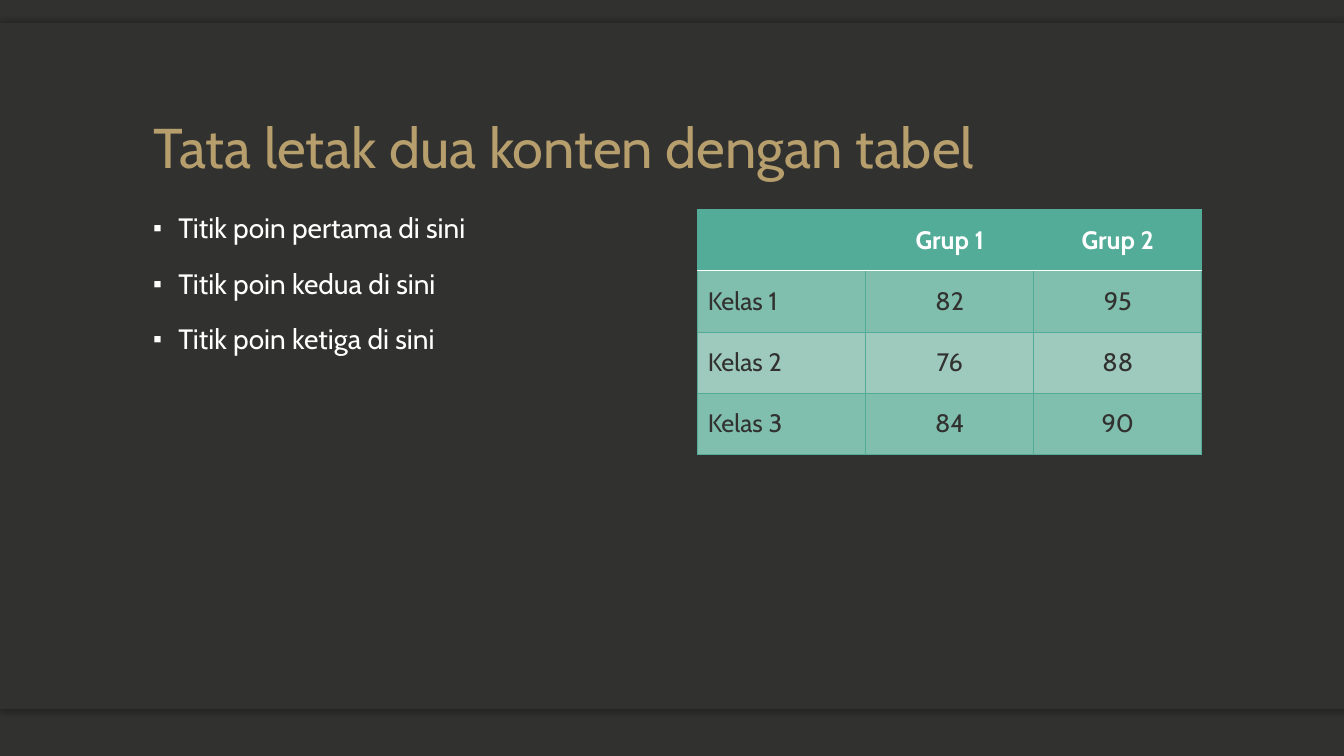
from pptx import Presentation
from pptx import util as u
from pptx.dml.color import RGBColor
from pptx.enum import shapes, text
from pptx.oxml import parse_xml
from pptx.oxml.ns import nsdecls, qn

COLOURS = {"dark": "31312F", "gold": "B79E6D", "white": "FFFFFF", "teal": "52AC97",
           "odd_row": "80BEAE", "even_row": "9ECABD", "shadow": "000000"}
FONT = "Cabin"
WIDTH, HEIGHT = 13.33, 7.5
MARGIN = 1.42
CONTENT_TOP = 2.08
COLUMN_WIDTH = 5
GAP = 0.5
POINTS = ["Titik poin pertama di sini", "Titik poin kedua di sini", "Titik poin ketiga di sini"]
SCORES = [["", "Grup 1", "Grup 2"],
          ["Kelas 1", "82", "95"],
          ["Kelas 2", "76", "88"],
          ["Kelas 3", "84", "90"]]


def colour(name):
    return RGBColor.from_string(COLOURS[name])


def style(paragraph, size, name, bold=False):
    font = paragraph.font
    font.size, font.name, font.bold = u.Pt(size), FONT, bold
    font.color.rgb = colour(name)


def inches(box):
    return [u.Inches(length) for length in box]


def add_panel(slide, box, shadow_angle=None):
    """Add a dark rectangle; an angle in degrees gives it a soft shadow."""
    panel = slide.shapes.add_shape(shapes.MSO_SHAPE.RECTANGLE, *inches(box))
    panel.fill.solid()
    panel.fill.fore_color.rgb = colour("dark")
    panel.line.fill.background()
    panel.shadow.inherit = False
    if shadow_angle is not None:
        effects = panel._element.spPr.find(qn("a:effectLst"))
        effects.append(parse_xml(
            f'<a:outerShdw {nsdecls("a")} blurRad="{u.Pt(4)}" dist="{u.Pt(2)}" '
            f'dir="{shadow_angle * 60000}" rotWithShape="0"><a:srgbClr val="{COLOURS["shadow"]}">'
            '<a:alpha val="25000"/></a:srgbClr></a:outerShdw>'))


def add_backdrop(slide, box):
    """Shade the upper and lower edges of a full-width panel."""
    left, top, width, height = box
    strip = 0.49
    add_panel(slide, (left, top + height - strip, width, strip), 90)
    add_panel(slide, (left, top, width, strip), 270)
    add_panel(slide, box)


def place_title(slide, box, wording):
    title = slide.shapes.title
    slide.shapes._spTree.append(title._element)  # in front of the backdrop
    title.left, title.top, title.width, title.height = inches(box)
    frame = title.text_frame
    frame.text = wording
    frame.word_wrap = True
    frame.auto_size = text.MSO_AUTO_SIZE.NONE
    frame.vertical_anchor = text.MSO_ANCHOR.BOTTOM
    paragraph = frame.paragraphs[0]
    paragraph.alignment = text.PP_ALIGN.LEFT
    paragraph.line_spacing = 0.9
    style(paragraph, 40, "gold")


def add_bullets(slide, box, points):
    frame = slide.shapes.add_textbox(*inches(box)).text_frame
    frame.word_wrap = True
    for index, point in enumerate(points):
        paragraph = frame.add_paragraph() if index else frame.paragraphs[0]
        paragraph.text = point
        paragraph.line_spacing = 0.9
        paragraph.space_before = u.Pt(18 if index else 0)
        properties = paragraph._p.get_or_add_pPr()
        properties.set("marL", str(u.Inches(0.25)))
        properties.set("indent", str(-u.Inches(0.25)))
        for bullet in ('buSzPct {} val="90000"', 'buFont {} typeface="Arial"', 'buChar {} char="▪"'):
            properties.append(parse_xml(f'<a:{bullet.format(nsdecls("a"))}/>'))
        style(paragraph, 20, "white")


def set_border(cell, side, name, width):
    cell._tc.get_or_add_tcPr().append(parse_xml(
        f'<a:ln{side} {nsdecls("a")} w="{u.Pt(width)}"><a:solidFill>'
        f'<a:srgbClr val="{COLOURS[name]}"/></a:solidFill></a:ln{side}>'))


def fill_cell(cell, wording, row, column):
    header = row == 0
    for side in "LRTB":
        divider = (header and side == "B") or (row == 1 and side == "T")
        set_border(cell, side, *(("white", 1) if divider else ("teal", 0.5)))
    cell.fill.solid()
    cell.fill.fore_color.rgb = colour("teal" if header else "odd_row" if row % 2 else "even_row")
    cell.vertical_anchor = text.MSO_ANCHOR.MIDDLE
    cell.text = wording
    paragraph = cell.text_frame.paragraphs[0]
    paragraph.alignment = text.PP_ALIGN.CENTER if column else text.PP_ALIGN.LEFT
    style(paragraph, 18, "white" if header else "dark", header)


def add_scores(slide, box, scores):
    table = slide.shapes.add_table(len(scores), len(scores[0]), *inches(box)).table
    for row, values in enumerate(scores):
        for column, value in enumerate(values):
            fill_cell(table.cell(row, column), value, row, column)


def add_content_slide(presentation):
    slide = presentation.slides.add_slide(presentation.slide_layouts[5])
    slide.background.fill.solid()
    slide.background.fill.fore_color.rgb = colour("dark")
    add_backdrop(slide, (0, 0.23, WIDTH, 6.8))
    place_title(slide, (MARGIN, 0.46, 2 * COLUMN_WIDTH + GAP, 1.38),
                "Tata letak dua konten dengan tabel")
    add_bullets(slide, (MARGIN, CONTENT_TOP, COLUMN_WIDTH, 4.67), POINTS)
    add_scores(slide, (MARGIN + COLUMN_WIDTH + GAP, CONTENT_TOP, COLUMN_WIDTH, 2.43), SCORES)


def main():
    presentation = Presentation()
    presentation.slide_width = u.Inches(WIDTH)
    presentation.slide_height = u.Inches(HEIGHT)
    add_content_slide(presentation)
    presentation.save("out.pptx")


if __name__ == "__main__":
    main()
